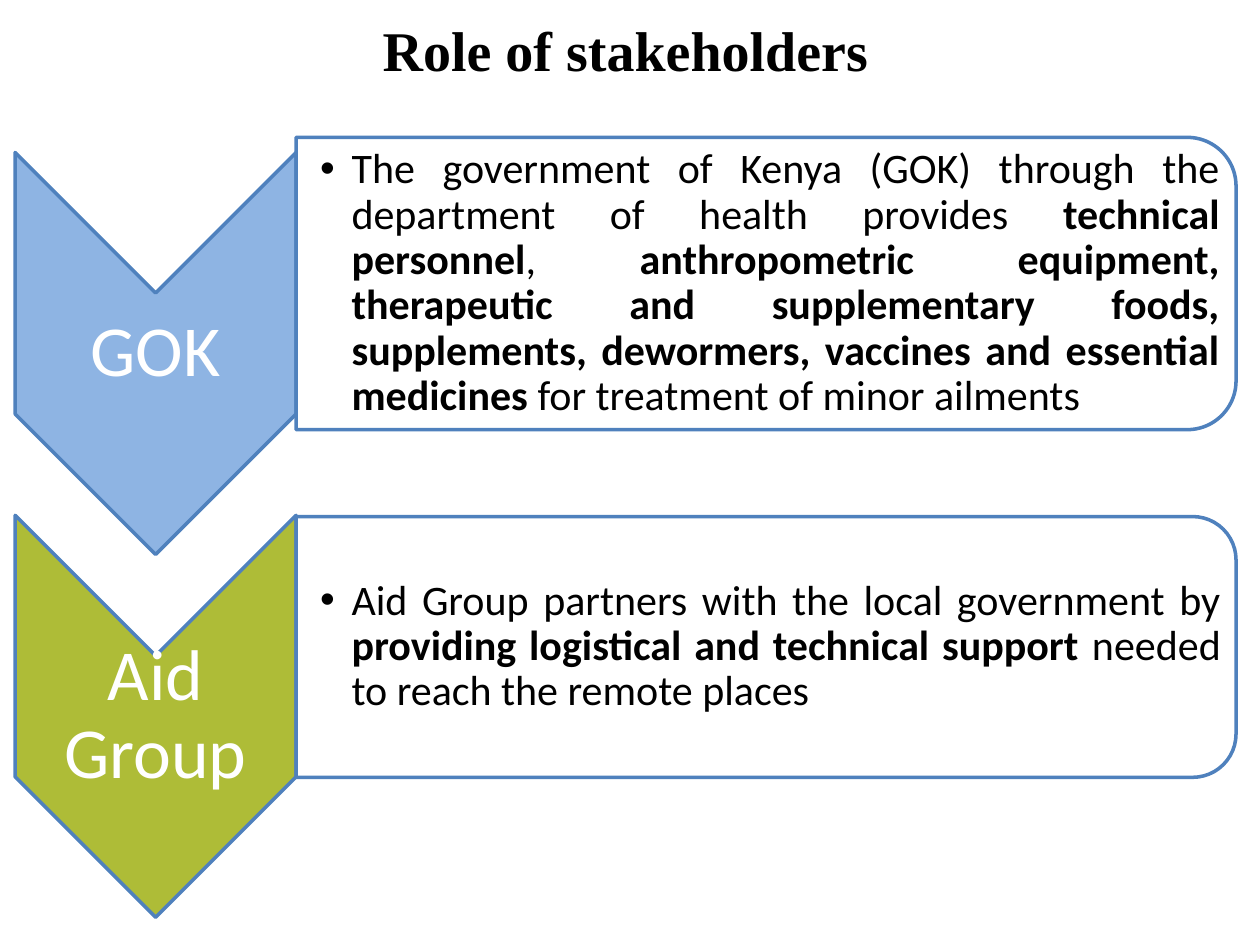
from lxml import etree
from pptx import Presentation
from pptx.dml.color import RGBColor
from pptx.enum import shapes, text
from pptx.oxml import ns
from pptx.util import Inches, Pt

OUTLINE = "4F81BD"
CHEVRON_LEFT, CHEVRON_WIDTH, CHEVRON_HEIGHT = 0.12, 2.23, 3.19
PANEL_LEFT, PANEL_WIDTH = 2.35, 7.46

# Each paragraph is a list of (words, bold) spans.
STAKEHOLDERS = [
    {"name": "GOK", "color": "8EB4E3", "chevron_top": 1.21,
     "panel_top": 1.09, "panel_height": 2.32, "inset": 0.11,
     "role": [
         ("The government of Kenya (GOK) through the department of health provides ", False),
         ("technical personnel", True),
         (", ", False),
         ("anthropometric equipment, therapeutic and supplementary foods, "
          "supplements, dewormers, vaccines and essential medicines ", True),
         ("for treatment of minor ailments", False)]},
    {"name": "Aid Group", "color": "AEBC37", "chevron_top": 4.09,
     "panel_top": 4.1, "panel_height": 2.07, "inset": 0.1,
     "role": [
         ("Aid Group partners with the local government by ", False),
         ("providing logistical and technical support", True),
         (" needed to reach the remote places", False)]},
]


def rgb(color):
    return RGBColor.from_string(color)


def add_turned_shape(page, kind, left, top, width, height, color):
    """Place a preset turned by 90 degrees so that it covers the given area."""
    shift = (width - height) / 2
    shape = page.shapes.add_shape(kind, Inches(left + shift), Inches(top - shift),
                                  Inches(height), Inches(width))
    shape.rotation = 90
    shape.shadow.inherit = False
    shape.fill.solid()
    shape.fill.fore_color.rgb = rgb(color)
    shape.line.color.rgb = rgb(OUTLINE)
    shape.line.width = Pt(2)
    return shape


def set_alpha(shape, percent):
    color = shape.fill._xPr.find(".//" + ns.qn("a:srgbClr"))
    etree.SubElement(color, ns.qn("a:alpha"), val=str(percent * 1000))


def add_bullet(para):
    properties = para._p.get_or_add_pPr()
    properties.set("marL", str(Inches(0.25)))
    properties.set("indent", str(Inches(-0.25)))
    etree.SubElement(properties, ns.qn("a:buFont"), typeface="Arial")
    etree.SubElement(properties, ns.qn("a:buChar"), char="•")


def add_text(page, area, spans, size, color="000000", font="Calibri",
             align="CENTER", spacing=0.9, margins=(0.03,) * 4, bullet=False):
    box = page.shapes.add_textbox(*map(Inches, area))
    frame = box.text_frame
    left, top, right, bottom = map(Inches, margins)
    settings = {"word_wrap": True, "vertical_anchor": text.MSO_ANCHOR.MIDDLE,
                "margin_left": left, "margin_top": top,
                "margin_right": right, "margin_bottom": bottom}
    for name, value in settings.items():
        setattr(frame, name, value)
    para = frame.paragraphs[0]
    para.alignment = text.PP_ALIGN[align]
    para.line_spacing = spacing
    if bullet:
        add_bullet(para)
    for words, bold in spans:
        span = para.add_run()
        span.text = words
        for name, value in {"name": font, "size": Pt(size), "bold": bold}.items():
            setattr(span.font, name, value)
        span.font.color.rgb = rgb(color)


def add_stakeholder(page, item):
    preset = shapes.MSO_SHAPE
    top, height, inset = item["panel_top"], item["panel_height"], item["inset"]
    add_turned_shape(page, preset.CHEVRON, CHEVRON_LEFT, item["chevron_top"],
                     CHEVRON_WIDTH, CHEVRON_HEIGHT, item["color"])
    label_top = item["chevron_top"] + CHEVRON_WIDTH / 2
    add_text(page, (CHEVRON_LEFT, label_top, CHEVRON_WIDTH, 0.96),
             [(item["name"], False)], 41, color="FFFFFF")
    panel = add_turned_shape(page, preset.ROUND_2_SAME_RECTANGLE, PANEL_LEFT, top,
                             PANEL_WIDTH, height, "FFFFFF")
    set_alpha(panel, 90)
    add_text(page, (PANEL_LEFT, top + inset, PANEL_WIDTH - inset, height - 2 * inset),
             item["role"], 24, align="JUSTIFY",
             margins=(0.19, 0.02, 0.02, 0.02), bullet=True)


def main():
    deck = Presentation()
    deck.slide_width, deck.slide_height = Inches(10), Inches(7.5)
    page = deck.slides.add_slide(deck.slide_layouts[6])
    add_text(page, (0.12, 0.03, 9.69, 0.72), [("Role of stakeholders", True)], 32,
             font="Times New Roman", spacing=1.0)
    for item in STAKEHOLDERS:
        add_stakeholder(page, item)
    deck.save("out.pptx")


if __name__ == "__main__":
    main()
